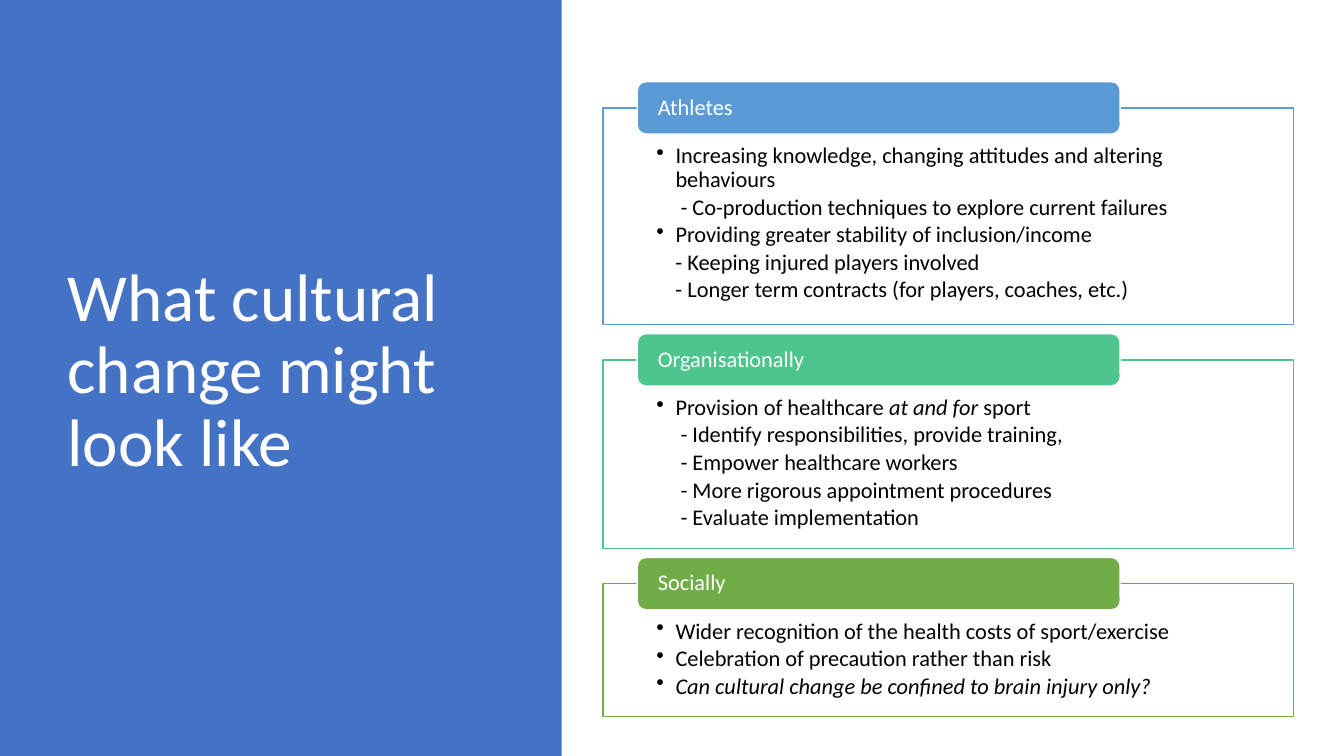
import pptx
import pptx.util
import pptx.dml.color
import pptx.enum.shapes
import pptx.enum.text
import pptx.oxml
import pptx.oxml.ns

Inches = pptx.util.Inches
Pt = pptx.util.Pt
SHAPE = pptx.enum.shapes.MSO_SHAPE
ANCHOR = pptx.enum.text.MSO_ANCHOR
ALIGN = pptx.enum.text.PP_ALIGN

COLOURS = {
    "panel": "4472C4",
    "athletes": "5B9BD5",
    "organisation": "4DC58D",
    "society": "70AD47",
    "white": "FFFFFF",
    "black": "000000",
}
TITLE = "What cultural change might look like"
BULLET, DASH = "bullet", "dash"
SECTIONS = [
    ("Athletes", "athletes", 2.15, [
        (BULLET, [("Increasing knowledge, changing attitudes and altering behaviours", False)]),
        (DASH, [(" - Co-production techniques to explore current failures", False)]),
        (BULLET, [("Providing greater stability of inclusion/income", False)]),
        (DASH, [("- Keeping injured players involved", False)]),
        (DASH, [("- Longer term contracts (for players, coaches, etc.)", False)]),
    ]),
    ("Organisationally", "organisation", 1.87, [
        (BULLET, [("Provision of healthcare", False), (" at and for ", True), ("sport", False)]),
        (DASH, [(" - Identify responsibilities, provide training,", False)]),
        (DASH, [(" - Empower healthcare workers", False)]),
        (DASH, [(" - More rigorous appointment procedures", False)]),
        (DASH, [(" - Evaluate implementation", False)]),
    ]),
    ("Socially", "society", 1.32, [
        (BULLET, [("Wider recognition of the health costs of sport/exercise", False)]),
        (BULLET, [("Celebration of precaution rather than risk", False)]),
        (BULLET, [("Can cultural change be confined to brain injury only?", True)]),
    ]),
]
FIRST_TOP, GAP = 1.07, 0.35
BOX_LEFT, BOX_WIDTH = 5.98, 6.85
HEADER_LEFT, HEADER_WIDTH, HEADER_HEIGHT = 6.32, 4.79, 0.52
INDENT = 0.19
LEFT_MARGINS = {BULLET: INDENT, DASH: 2 * INDENT}


def colour(name):
    return pptx.dml.color.RGBColor.from_string(COLOURS[name])


def set_all(target, values):
    for name, value in values.items():
        setattr(target, name, value)


def add_box(page, kind, place, fill, line=None):
    box = page.shapes.add_shape(kind, *map(Inches, place))
    box.shadow.inherit = False
    box.fill.solid()
    box.fill.fore_color.rgb = colour(fill)
    if line:
        box.line.color.rgb = colour(line)
        box.line.width = Pt(1)
    else:
        box.line.fill.background()
    return box


def set_frame(box, anchor, left, top, bottom):
    set_all(box.text_frame, {
        "word_wrap": True,
        "vertical_anchor": anchor,
        "margin_left": Inches(left),
        "margin_right": Inches(left),
        "margin_top": Inches(top),
        "margin_bottom": Inches(bottom),
    })


def write(para, runs, size, ink, space_after=0):
    set_all(para, {
        "alignment": ALIGN.LEFT,
        "line_spacing": 0.9,
        "space_after": Pt(space_after),
    })
    for text, italic in runs:
        span = para.add_run()
        span.text = text
        set_all(span.font, {"name": "Calibri", "size": Pt(size), "italic": italic})
        span.font.color.rgb = colour(ink)


def indent(para, kind):
    properties = para._p.get_or_add_pPr()
    properties.set("marL", str(Inches(LEFT_MARGINS[kind])))
    properties.set("indent", str(Inches(-INDENT)))
    if kind == BULLET:
        mark = pptx.oxml.parse_xml(
            f'<a:buChar {pptx.oxml.ns.nsdecls("a")} char="•"/>')
        properties.append(mark)


def add_section(page, top, heading, accent, height, lines):
    box = add_box(page, SHAPE.RECTANGLE, (BOX_LEFT, top, BOX_WIDTH, height), "white", accent)
    set_frame(box, ANCHOR.TOP, 0.53, 0.36, 0.12)
    for number, (kind, runs) in enumerate(lines):
        frame = box.text_frame
        para = frame.add_paragraph() if number else frame.paragraphs[0]
        write(para, runs, 16, "black", 2.4)
        indent(para, kind)
    place = (HEADER_LEFT, top - HEADER_HEIGHT / 2, HEADER_WIDTH, HEADER_HEIGHT)
    header = add_box(page, SHAPE.ROUNDED_RECTANGLE, place, accent, "white")
    set_frame(header, ANCHOR.MIDDLE, 0.18, 0, 0)
    write(header.text_frame.paragraphs[0], [(heading, False)], 16, "white")


def main():
    deck = pptx.Presentation()
    set_all(deck, {"slide_width": Inches(13.33), "slide_height": Inches(7.5)})
    page = deck.slides.add_slide(deck.slide_layouts[5])

    title = page.shapes.title
    set_all(title, {
        "left": Inches(0.57),
        "top": Inches(0.68),
        "width": Inches(4.16),
        "height": Inches(6.02),
    })
    set_frame(title, ANCHOR.MIDDLE, 0.1, 0.05, 0.05)
    write(title.text_frame.paragraphs[0], [(TITLE, False)], 48, "white")
    panel = add_box(page, SHAPE.RECTANGLE, (0, 0, 5.57, 7.5), "panel")
    title._element.addprevious(panel._element)

    top = FIRST_TOP
    for heading, accent, height, lines in SECTIONS:
        add_section(page, top, heading, accent, height, lines)
        top += height + GAP
    deck.save("out.pptx")


if __name__ == "__main__":
    main()
